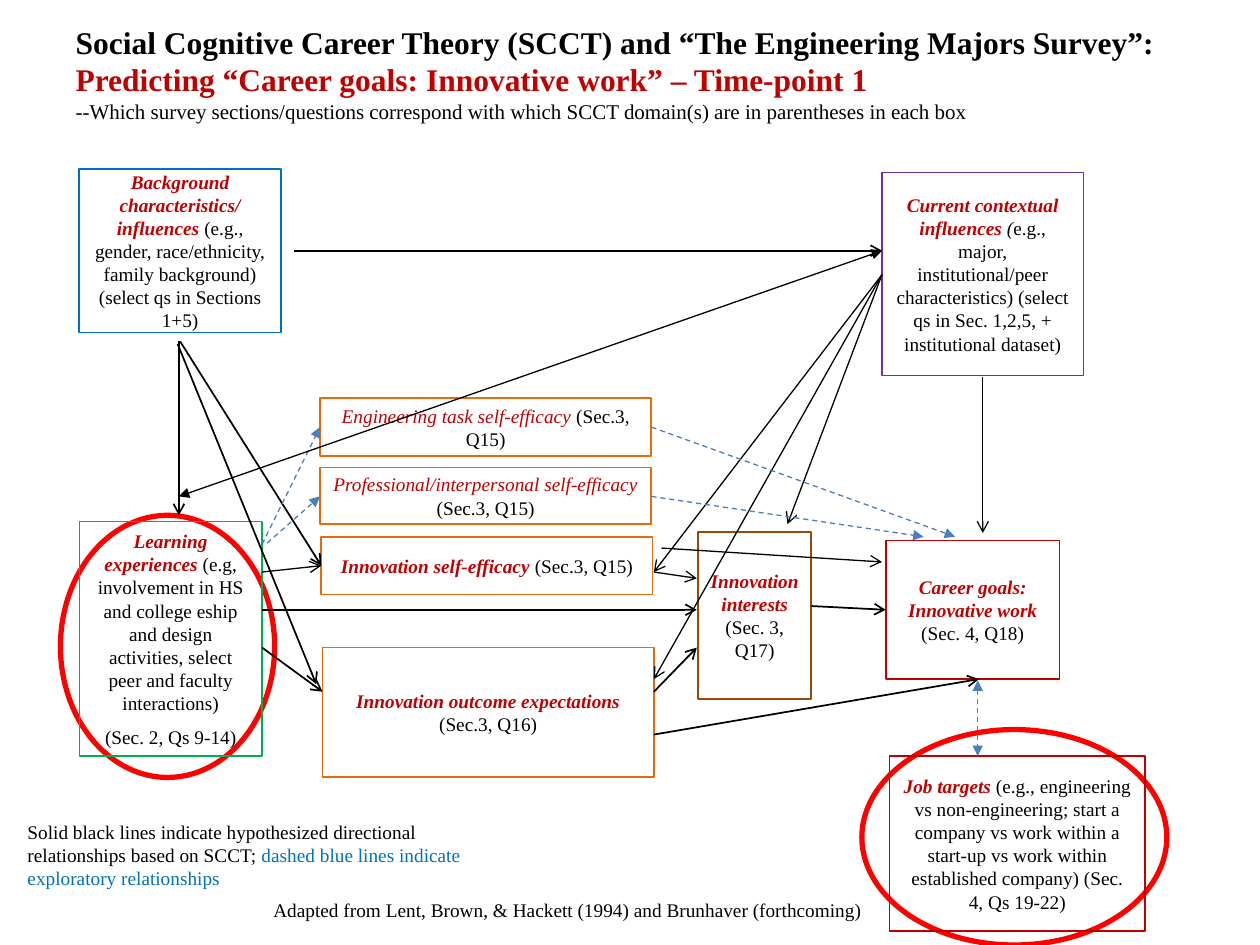
from lxml.etree import SubElement
from pptx import Presentation
from pptx.dml.color import RGBColor
from pptx.enum.dml import MSO_LINE
from pptx.enum.shapes import MSO_CONNECTOR, MSO_SHAPE
from pptx.enum.text import MSO_ANCHOR as ANCHOR, MSO_AUTO_SIZE as FIT, PP_ALIGN as ALIGN
from pptx.oxml.ns import qn
from pptx.util import Inches, Pt

BLACK, RED, BLUE, DASH_BLUE = "000000", "C00000", "0070C0", "4B7EBC"
ORANGE = "E46C0A"


def color(value):
    """Turn a hex string into a colour."""
    return RGBColor.from_string(value)


def add_span(para, text, font="Times New Roman", size=11, fill=BLACK, bold=False, italic=False):
    """Add formatted text to a paragraph."""
    span = para.add_run()
    span.text = text
    span.font.name, span.font.size = font, Pt(size)
    span.font.bold, span.font.italic = bold, italic
    span.font.color.rgb = color(fill)


class Diagram:
    """Holds the style and the current slide of the diagram."""

    def __init__(self, slide):
        """Keep the slide to draw on."""
        self.slide = slide
        self.term = {"fill": RED, "bold": True, "italic": True}

    def fill_text(self, shape, paragraphs, align=ALIGN.LEFT, after=0, anchor=ANCHOR.TOP):
        """Fill a shape with paragraphs of (text, format) pairs."""
        frame = shape.text_frame
        frame.word_wrap, frame.auto_size = True, FIT.NONE
        frame.vertical_anchor = anchor
        for index, spans in enumerate(paragraphs):
            para = frame.paragraphs[0] if index == 0 else frame.add_paragraph()
            para.alignment = align
            para.space_before, para.space_after = Pt(0), Pt(after)
            for text, style in spans:
                add_span(para, text, **style)

    def title(self, area, paragraphs):
        """Place and fill the title."""
        title = self.slide.shapes.title
        title.left, title.top, title.width, title.height = map(Inches, area)
        self.fill_text(title, paragraphs)

    def note(self, area, paragraphs, align=ALIGN.LEFT):
        """Add a free text box."""
        box = self.slide.shapes.add_textbox(*map(Inches, area))
        self.fill_text(box, paragraphs, align)

    def outline(self, kind, area, stroke, weight):
        """Add a shape with an outline and no fill."""
        shape = self.slide.shapes.add_shape(kind, *map(Inches, area))
        shape.shadow.inherit = False
        shape.fill.background()
        shape.line.color.rgb, shape.line.width = color(stroke), Pt(weight)
        return shape

    def highlight(self, area):
        """Add a thick red ellipse with a white fill."""
        ellipse = self.outline(MSO_SHAPE.OVAL, area, "FF0000", 3)
        ellipse.fill.solid()
        ellipse.fill.fore_color.rgb = color("FFFFFF")

    def domain(self, area, stroke, paragraphs, after=6):
        """Add a box for one domain of the theory."""
        box = self.outline(MSO_SHAPE.RECTANGLE, area, stroke, 1)
        self.fill_text(box, paragraphs, ALIGN.CENTER, after, ANCHOR.MIDDLE)

    def arrow(self, start, end, weight=0.75, stroke=BLACK, dashed=False, tip="arrow", both=False):
        """Add an arrow from start to end."""
        line = self.slide.shapes.add_connector(
            MSO_CONNECTOR.STRAIGHT, *map(Inches, (*start, *end)))
        line.line.color.rgb, line.line.width = color(stroke), Pt(weight)
        if dashed:
            line.line.dash_style = MSO_LINE.DASH
        properties = line._element.spPr
        stroke_xml = properties.find(qn("a:ln"))
        for tag in ("a:headEnd", "a:tailEnd") if both else ("a:tailEnd",):
            SubElement(stroke_xml, qn(tag), type=tip)
        SubElement(properties, qn("a:effectLst"))


def main():
    """Build the slide and save it."""
    deck = Presentation()
    deck.slide_width, deck.slide_height = Inches(10), Inches(7.5)
    diagram = Diagram(deck.slides.add_slide(deck.slide_layouts[5]))
    term, plain = diagram.term, {}
    minor_term = {"fill": RED, "italic": True}

    diagram.title((0.5, 0.13, 9, 1.25), [
        [("Social Cognitive Career Theory (SCCT) and “The Engineering Majors Survey”: ",
          {"size": 18, "bold": True}),
         ("Predicting “Career goals: Innovative work” – Time-point 1",
          {"size": 18, "bold": True, "fill": RED})],
        [("--Which survey sections/questions correspond with which SCCT domain(s) "
          "are in parentheses in each box", {"size": 12})]])

    for area in ((6.84, 5.79, 2.42, 1.71), (0.48, 4.09, 1.7, 2.08)):
        diagram.highlight(area)

    diagram.domain((0.63, 1.34, 1.6, 1.3), BLUE, [
        [("Background", term)],
        [("characteristics/ influences ", term),
         ("(e.g., gender, race/ethnicity, family background) (select qs in Sections 1+5)", plain)]],
        after=0)
    diagram.domain((7, 1.37, 1.6, 1.61), "7030A0", [
        [("Current contextual influences ", term), ("(", {"italic": True}),
         ("e.g., major, institutional/peer characteristics) "
          "(select qs in Sec. 1,2,5, + institutional dataset)", plain)]], after=0)
    diagram.domain((0.63, 4.14, 1.45, 1.86), "00B050", [
        [("Learning experiences ", term),
         ("(e.g, involvement in HS and college eship and design activities, "
          "select peer and faculty interactions)", plain)],
        [("(Sec. 2, Qs 9-14)", plain)]])

    domains = [
        ((2.54, 3.16, 2.63, 0.46), ORANGE, "Engineering task self-efficacy ", minor_term,
         "(Sec.3, Q15)"),
        ((2.54, 3.71, 2.63, 0.45), ORANGE, "Professional/interpersonal self-efficacy ", minor_term,
         "(Sec.3, Q15)"),
        ((2.55, 4.26, 2.63, 0.46), ORANGE, "Innovation self-efficacy ", term, "(Sec.3, Q15)"),
        ((2.56, 5.14, 2.63, 1.03), ORANGE, "Innovation outcome expectations ", term,
         "(Sec.3, Q16)"),
        ((5.54, 4.22, 0.9, 1.33), "984807", "Innovation interests ", term, "(Sec. 3, Q17)"),
        ((7.03, 4.29, 1.38, 1.1), RED, "Career goals: Innovative work ", term, "(Sec. 4, Q18)"),
        ((7.06, 6, 2.03, 1.39), RED, "Job targets ", term,
         "(e.g., engineering vs non-engineering; start a company vs work within a start-up "
         "vs work within established company) (Sec. 4, Qs 19-22)"),
    ]
    for area, stroke, name, style, source in domains:
        diagram.domain(area, stroke, [[(name, style), (source, plain)]])

    diagram.note((0.17, 7.08, 8.67, 0.29), [
        [("Adapted from Lent, Brown, & Hackett (1994) and Brunhaver (forthcoming)", plain)]],
        ALIGN.CENTER)
    diagram.note((0.12, 6.46, 4, 0.66), [
        [("Solid black lines indicate hypothesized directional relationships based on SCCT; ",
          plain),
         ("dashed blue lines indicate exploratory relationships", {"fill": BLUE})]])

    main_paths = [
        ((2.08, 5.14), (2.56, 5.49)), ((5.19, 5.49), (5.53, 5.14)),
        ((5.19, 5.83), (7.77, 5.39)), ((2.33, 1.99), (7, 1.99)),
        ((2.08, 4.84), (5.53, 4.84)), ((1.42, 2.71), (1.42, 4.09)),
        ((6.44, 4.81), (7.03, 4.84)), ((1.43, 2.71), (2.55, 4.49)),
        ((1.41, 2.73), (2.51, 5.43)),
    ]
    context = (7, 2.18)
    thin_paths = [
        ((2.08, 4.54), (2.55, 4.49)), ((5.19, 4.54), (5.53, 4.59)),
        (context, (5.19, 5.39)), (context, (5.19, 4.54)), (context, (6.25, 4.16)),
        ((7.8, 2.99), (7.8, 4.23)), ((5.25, 4.35), (7, 4.46)),
    ]
    exploratory_paths = [
        ((5.17, 3.39), (7.58, 4.26)), ((5.17, 3.94), (7.33, 4.26)),
        ((2.08, 4.32), (2.54, 3.39)), ((2.12, 4.31), (2.54, 3.94)),
    ]
    exploratory = {"stroke": DASH_BLUE, "dashed": True, "tip": "triangle"}
    for paths, style in ((main_paths, {"weight": 1}), (thin_paths, {}),
                         (exploratory_paths, exploratory)):
        for start, end in paths:
            diagram.arrow(start, end, **style)
    diagram.arrow((7.76, 5.4), (7.76, 6), both=True, **exploratory)
    diagram.arrow((1.42, 3.94), (7, 1.99), tip="triangle", both=True)

    deck.save("out.pptx")


if __name__ == "__main__":
    main()
